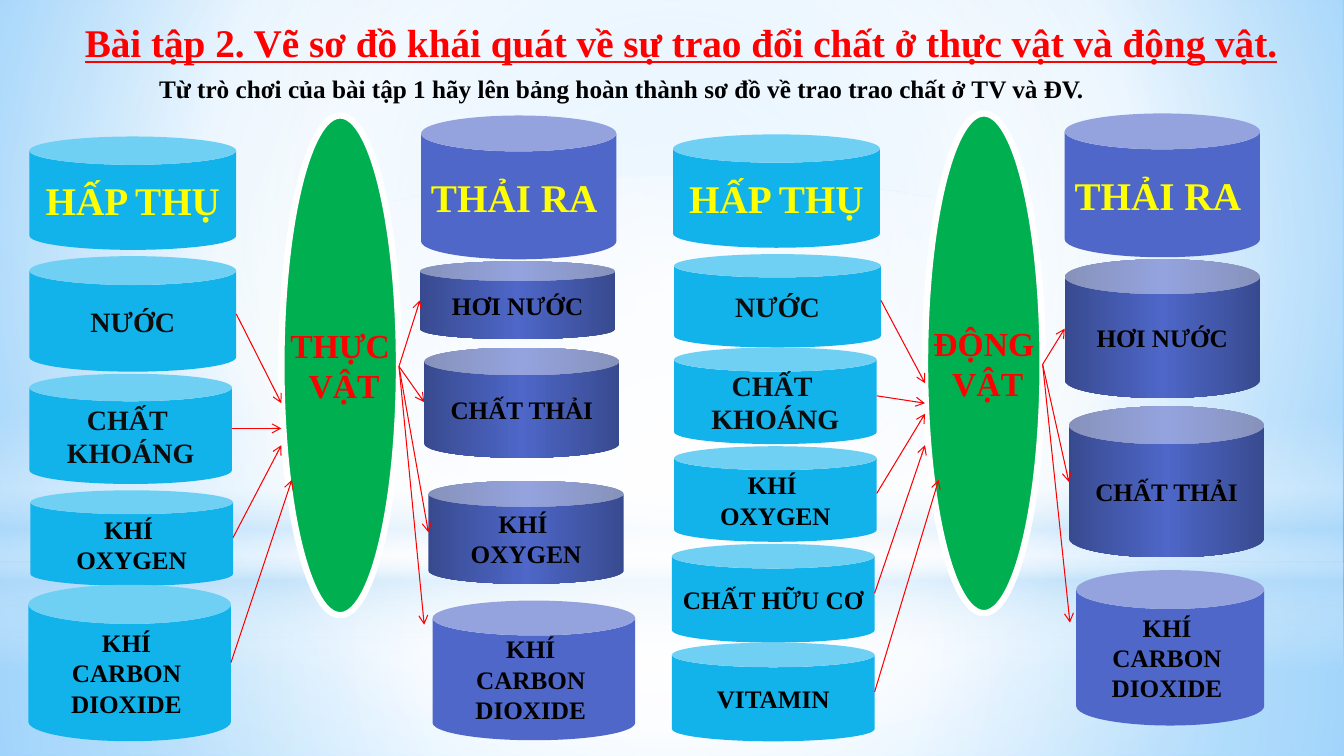
from dataclasses import dataclass

from lxml.etree import SubElement
from pptx import Presentation
from pptx.dml.color import RGBColor
from pptx.enum.shapes import MSO_CONNECTOR, MSO_SHAPE
from pptx.enum.text import MSO_ANCHOR, PP_ALIGN
from pptx.oxml.ns import qn
from pptx.util import Pt

PX = 9525  # EMU in one px, 96 px to the inch


@dataclass(frozen=True)
class Theme:
    font: str = "Times New Roman"
    red: str = "FF0000"
    yellow: str = "FFFF00"
    black: str = "000000"
    ink: str = "0D0D0D"
    white: str = "FFFFFF"
    green: str = "00B050"
    cyan: str = "12B2EB"
    indigo: str = "4E67C8"
    navy: str = "384A8F"
    mist: str = "B4DCFA"
    sky: str = "9ED5FF"
    deep_sky: str = "5BB9FF"
    heading: int = 28
    hub: int = 24
    large: int = 20
    body: int = 18
    arrow_width: float = 0.75
    rim_width: float = 4.5


THEME = Theme()
METAL = [(0, THEME.navy, 100), (50, THEME.indigo, 100), (100, THEME.navy, 100)]
CENTRE = (50, 50, 50, 50)


@dataclass(frozen=True)
class Can:
    """A cylinder in a panel; tip is the arrow end away from its side."""
    lines: tuple
    box: tuple
    tip: tuple = None
    size: int = THEME.body
    colour: str = THEME.black
    fill: object = THEME.cyan


def emu(*lengths):
    return [length * PX for length in lengths]


def set_gradient(properties, stops, centre=None, angle=0):
    """Swap the solid fill for a gradient of (position, colour, opacity) stops."""
    solid = properties.find(qn("a:solidFill"))
    gradient = properties.makeelement(qn("a:gradFill"), {"rotWithShape": "1"})
    stop_list = SubElement(gradient, qn("a:gsLst"))
    for position, colour, opacity in stops:
        stop = SubElement(stop_list, qn("a:gs"), pos=str(position * 1000))
        tone = SubElement(stop, qn("a:srgbClr"), val=colour)
        if opacity < 100:
            SubElement(tone, qn("a:alpha"), val=str(opacity * 1000))
    if centre:
        circle = SubElement(gradient, qn("a:path"), {"path": "circle"})
        edges = {side: str(inset * 1000) for side, inset in zip("ltrb", centre)}
        SubElement(circle, qn("a:fillToRect"), edges)
    else:
        SubElement(gradient, qn("a:lin"), ang=str(angle * 60000), scaled="0")
    properties.replace(solid, gradient)


def add_figure(slide, preset, box, fill, centre=None, angle=0):
    shape = slide.shapes.add_shape(preset, *emu(*box))
    shape.shadow.inherit = False
    shape.line.fill.background()
    shape.fill.solid()
    if isinstance(fill, str):
        shape.fill.fore_color.rgb = RGBColor.from_string(fill)
    else:
        set_gradient(shape.element.spPr, fill, centre, angle)
    return shape


def write(shape, lines, size, colour, align=PP_ALIGN.CENTER, underline=None):
    frame = shape.text_frame
    for index, line in enumerate(lines):
        paragraph = frame.add_paragraph() if index else frame.paragraphs[0]
        paragraph.alignment = align
        run = paragraph.add_run()
        run.text = line
        run.font.name = THEME.font
        run.font.size = Pt(size)
        run.font.bold = True
        run.font.underline = underline
        run.font.color.rgb = RGBColor.from_string(colour)


def label(shape, lines, size, colour, align=PP_ALIGN.CENTER):
    shape.text_frame.word_wrap = False
    shape.text_frame.vertical_anchor = MSO_ANCHOR.MIDDLE
    write(shape, lines, size, colour, align)


def add_arrow(slide, start, end):
    arrow = slide.shapes.add_connector(MSO_CONNECTOR.STRAIGHT, *emu(*start, *end))
    arrow.line.color.rgb = RGBColor.from_string(THEME.red)
    arrow.line.width = Pt(THEME.arrow_width)
    SubElement(arrow.line._get_or_add_ln(), qn("a:tailEnd"), type="arrow")
    SubElement(arrow.element.spPr, qn("a:effectLst"))


def draw_backdrop(slide):
    slide.background.fill.solid()
    set_gradient(slide.element.find(".//" + qn("p:bgPr")),
                 [(0, THEME.sky, 100), (60, THEME.white, 100), (100, THEME.deep_sky, 100)],
                 centre=(20, 10, 20, 60))
    white, mist = THEME.white, THEME.mist
    # Floor, sky, horizon band and central glow
    add_figure(slide, MSO_SHAPE.RECTANGLE, (0, 536, 1280, 184),
               [(0, white, 91), (37, white, 76), (100, mist, 79)], CENTRE)
    add_figure(slide, MSO_SHAPE.RECTANGLE, (0, 0, 1280, 536),
               [(0, white, 89), (48, white, 62), (100, mist, 79)], CENTRE)
    add_figure(slide, MSO_SHAPE.RECTANGLE, (0, 396, 1280, 240),
               [(0, white, 0), (29, white, 30), (45, mist, 40),
                (55, white, 26), (65, mist, 60), (100, white, 0)], angle=90)
    add_figure(slide, MSO_SHAPE.OVAL, (0, 168, 1280, 536),
               [(0, white, 100), (56, white, 0)], CENTRE)


def draw_text(slide, box, line, size, colour, align, underline=None):
    text_box = slide.shapes.add_textbox(*emu(*box))
    text_box.text_frame.word_wrap = True
    write(text_box, [line], size, colour, align, underline)


def draw_panel(slide, origin, organism, absorbed, released):
    """One exchange diagram: intake cans, organism, output cans."""
    left, top = origin

    def at(x, y):
        return left + x, top + y

    def draw_can(can, align=PP_ALIGN.CENTER):
        x, y, width, height = can.box
        shape = add_figure(slide, MSO_SHAPE.CAN, (*at(x, y), width, height), can.fill)
        label(shape, can.lines, can.size, can.colour, align)

    # Organism
    ellipse = add_figure(slide, MSO_SHAPE.OVAL, (*at(241, 0), 112, 476), THEME.green)
    ellipse.line.color.rgb = RGBColor.from_string(THEME.white)
    ellipse.line.width = Pt(THEME.rim_width)
    label(ellipse, organism, THEME.hub, THEME.red)

    # Column headings
    draw_can(Can(("HẤP THỤ",), (1, 20, 197, 108), None, THEME.heading, THEME.yellow))
    draw_can(Can(("THẢI RA",), (374, 0, 186, 137), None, THEME.heading,
                 THEME.yellow, THEME.indigo), PP_ALIGN.LEFT)

    # Intake, with arrows from the right side of each can
    for can in absorbed:
        draw_can(can)
        x, y, width, height = can.box
        add_arrow(slide, at(x + width, y + height // 2), at(*can.tip))

    # Output, with arrows from the organism to the left side of each can
    for can in released:
        draw_can(can)
        x, y, width, height = can.box
        add_arrow(slide, at(353, 239), at(*(can.tip or (x, y + height // 2))))


WATER, MINERAL, OXYGEN = ("NƯỚC",), ("CHẤT ", "KHOÁNG"), ("KHÍ ", "OXYGEN")
CARBON = ("KHÍ ", "CARBON ", "DIOXIDE ")
VAPOUR, WASTE = ("HƠI NƯỚC",), ("CHẤT THẢI",)

PLANT_IN = [
    Can(WATER, (1, 134, 197, 110), (241, 274), THEME.large, THEME.ink),
    Can(MINERAL, (1, 246, 193, 105), (241, 298), THEME.large, THEME.ink),
    Can(OXYGEN, (2, 357, 193, 91), (241, 314)),
    Can(CARBON, (0, 447, 193, 149), (251, 347)),
]
PLANT_OUT = [
    Can(VAPOUR, (373, 139, 186, 74), fill=METAL),
    Can(WASTE, (377, 221, 186, 105), fill=METAL),
    Can(OXYGEN, (381, 348, 186, 98), fill=METAL),
    Can(CARBON, (385, 462, 193, 133), (377, 485), fill=THEME.indigo),
]
ANIMAL_IN = [
    Can(WATER, (2, 134, 197, 89), (241, 257), THEME.large, THEME.ink),
    Can(MINERAL, (2, 223, 193, 92), (241, 276), THEME.large, THEME.ink),
    Can(OXYGEN, (2, 317, 193, 91), (241, 286)),
    Can(("CHẤT HỮU CƠ",), (0, 410, 193, 94), (241, 316)),
    Can(("VITAMIN",), (0, 504, 193, 94), (254, 349)),
]
ANIMAL_OUT = [
    Can(VAPOUR, (374, 139, 186, 132), fill=METAL),
    Can(WASTE, (378, 279, 186, 144), fill=METAL),
    Can(CARBON, (385, 435, 179, 148), (379, 485), fill=THEME.indigo),
]


def main():
    presentation = Presentation()
    presentation.slide_width, presentation.slide_height = emu(1280, 720)
    slide = presentation.slides.add_slide(presentation.slide_layouts[6])
    draw_backdrop(slide)
    draw_panel(slide, (27, 110), ("THỰC", " VẬT"), PLANT_IN, PLANT_OUT)
    draw_panel(slide, (640, 108), ("ĐỘNG", " VẬT"), ANIMAL_IN, ANIMAL_OUT)
    draw_text(slide, (27, 13, 1243, 55),
              "Bài tập 2. Vẽ sơ đồ khái quát về sự trao đổi chất ở thực vật và động vật.",
              THEME.heading, THEME.red, PP_ALIGN.CENTER, underline=True)
    draw_text(slide, (142, 65, 979, 38),
              "Từ trò chơi của bài tập 1 hãy lên bảng hoàn thành sơ đồ về trao trao chất ở TV và ĐV.",
              THEME.body, THEME.black, PP_ALIGN.LEFT)
    presentation.save("out.pptx")


if __name__ == "__main__":
    main()
